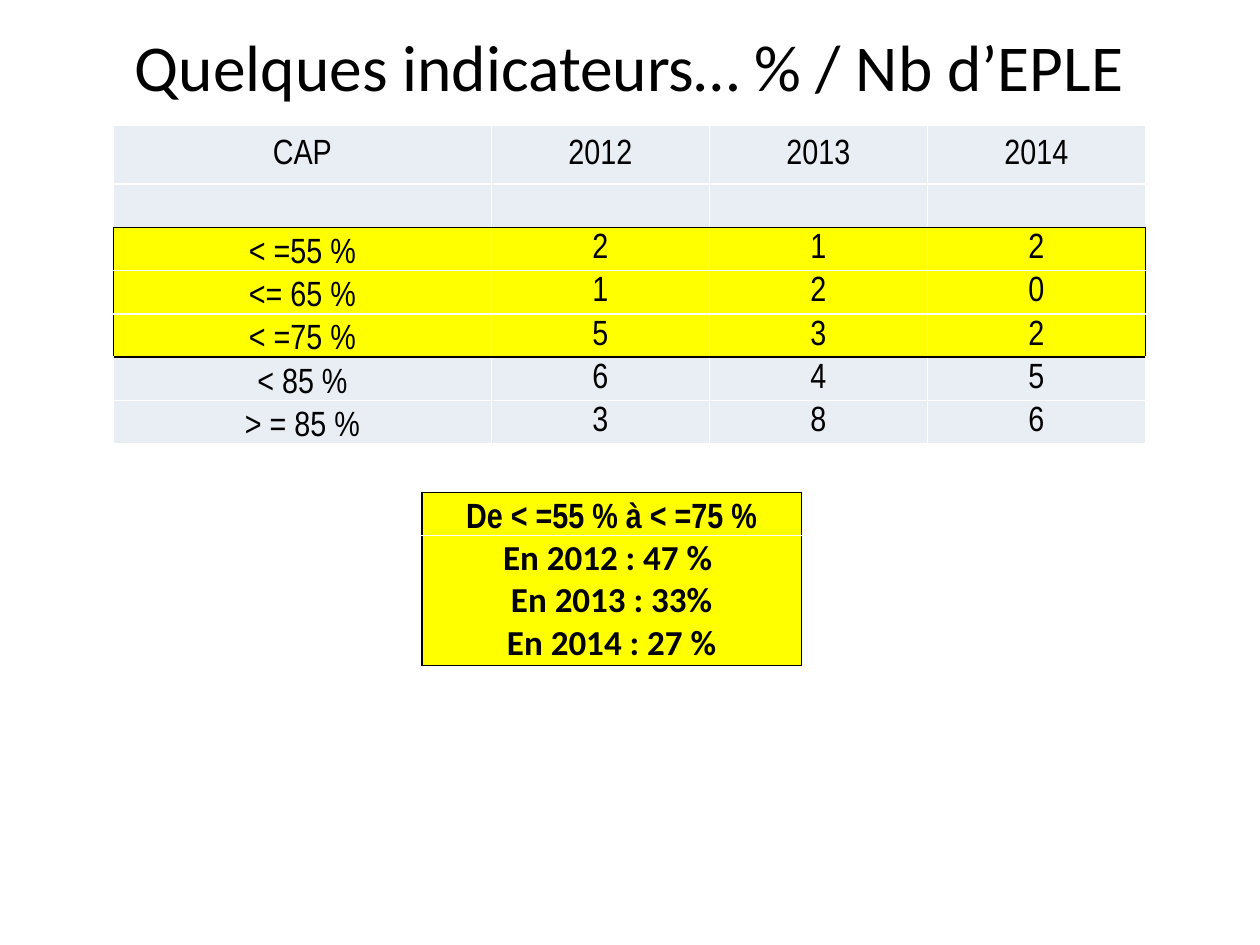
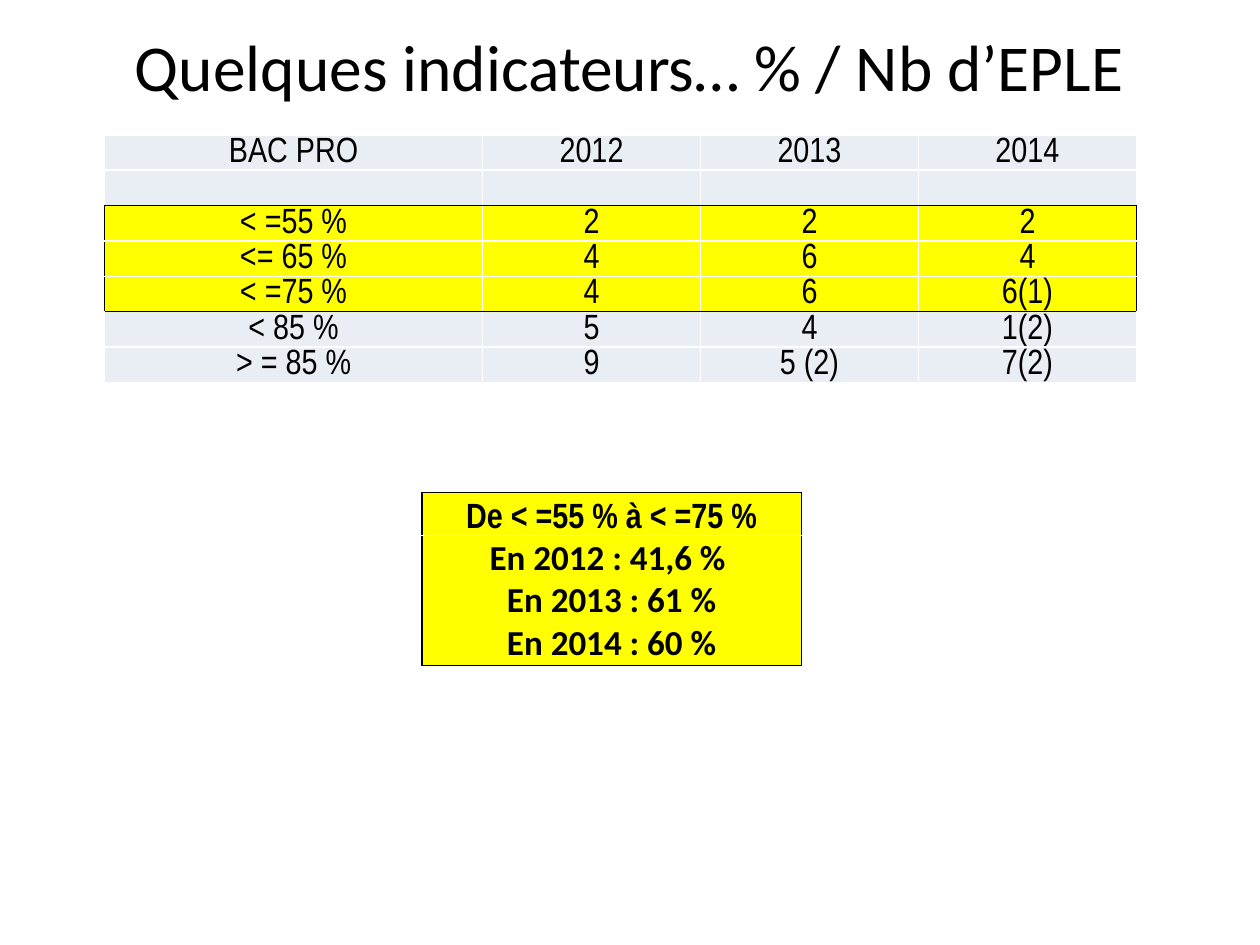
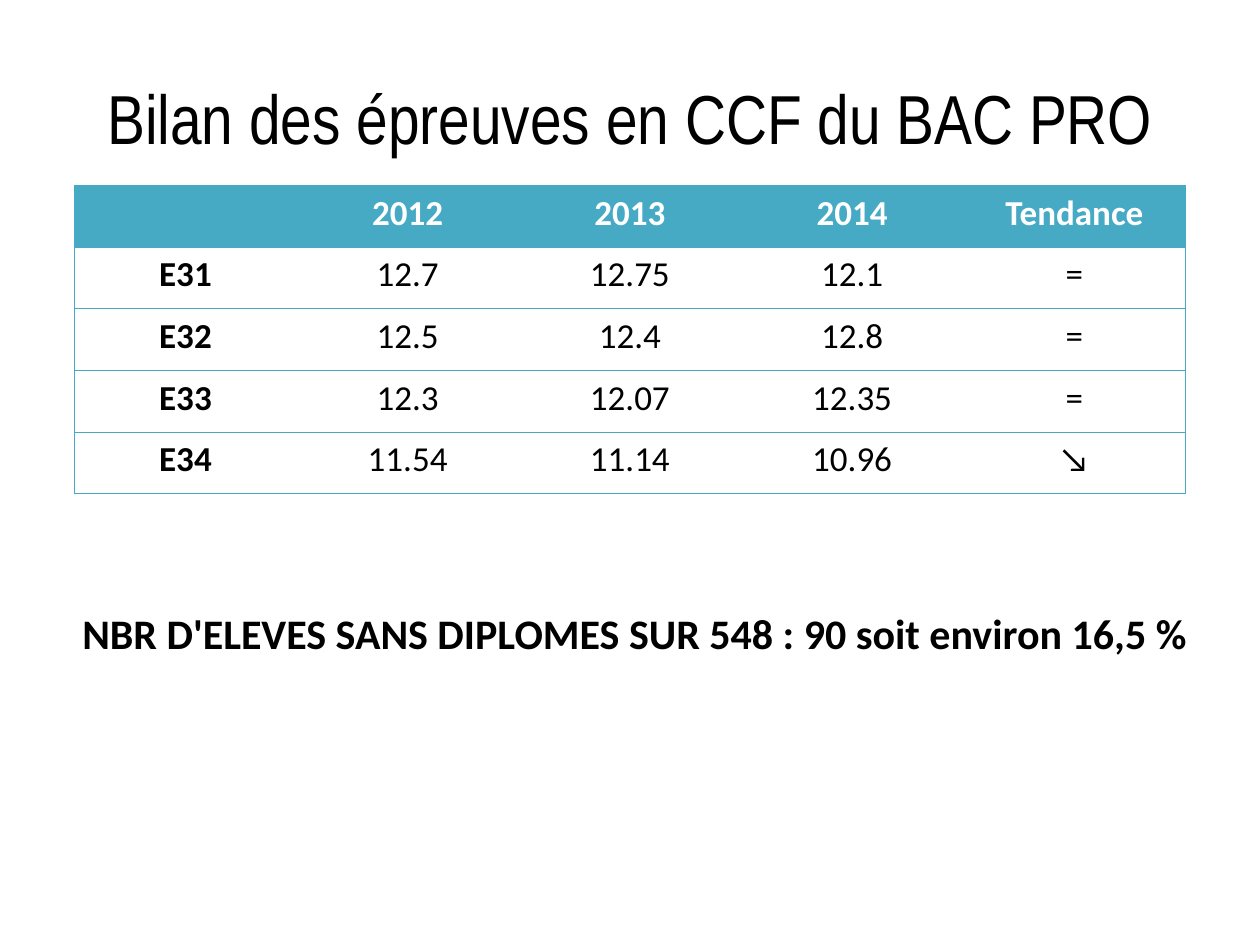
from lxml.etree import SubElement
from pptx import Presentation
from pptx.dml.color import RGBColor
from pptx.enum.text import MSO_ANCHOR, MSO_AUTO_SIZE, PP_ALIGN
from pptx.oxml.ns import qn
from pptx.util import Inches, Pt

BLACK = RGBColor(0x00, 0x00, 0x00)
WHITE = RGBColor(0xFF, 0xFF, 0xFF)
YELLOW = RGBColor(0xFF, 0xFF, 0x00)
PALE = RGBColor(0xE9, 0xED, 0xF4)
TEAL = RGBColor(0x46, 0xAA, 0xC5)

SANS, NARROW = "Calibri", "Arial Narrow"
COLS, ROWS = 100, 75
UNIT = Inches(0.1)
PLAIN = "{2D5ABB26-0587-4C30-8999-92F81FD0307C}"
BANDS = ["< =55 %", "<= 65 %", "< =75 %", "< 85 %", "> = 85 %"]
YEARS = ["2012", "2013", "2014"]
LOW = range(2, 5)
MID, BASE, TOP = MSO_ANCHOR.MIDDLE, MSO_ANCHOR.BOTTOM, MSO_ANCHOR.TOP


def span(*cells):
    """Turn grid steps into lengths."""
    return [round(n * UNIT) for n in cells]


class Deck:
    def __init__(self):
        self.prs = Presentation()
        self.prs.slide_width, self.prs.slide_height = span(COLS, ROWS)
        self.slide = None

    def page(self, title, box, font, size):
        self.slide = self.prs.slides.add_slide(self.prs.slide_layouts[5])
        head = self.slide.shapes.title
        head.left, head.top, head.width, head.height = span(*box)
        frame = head.text_frame
        frame.auto_size = MSO_AUTO_SIZE.NONE
        frame.vertical_anchor = MID
        self.text(frame, [title], font, size)

    def text(self, frame, lines, font, size, color=BLACK, bold=False, gap=None):
        for i, line in enumerate(lines):
            para = frame.add_paragraph() if i else frame.paragraphs[0]
            para.alignment = PP_ALIGN.CENTER
            para.line_spacing = gap
            run = para.add_run()
            run.text = line
            run.font.name, run.font.size = font, Pt(size)
            run.font.color.rgb, run.font.bold = color, bold

    def note(self, text, box):
        frame = self.slide.shapes.add_textbox(*span(*box)).text_frame
        frame.word_wrap = True
        self.text(frame, [text], SANS, 24, bold=True)

    def grid(self, spot, widths, heights):
        """Add a table without style, sized by its columns and rows."""
        box = span(*spot, sum(widths), sum(heights))
        shape = self.slide.shapes.add_table(len(heights), len(widths), *box)
        table = shape.table
        table._tbl.tblPr.find(qn("a:tableStyleId")).text = PLAIN
        table.first_row = table.horz_banding = False
        for col, width in zip(table.columns, span(*widths)):
            col.width = width
        for row, height in zip(table.rows, span(*heights)):
            row.height = height
        return table

    def cell(self, cell, lines, fill, anchor, pads, **style):
        cell.vertical_anchor = anchor
        (cell.margin_left, cell.margin_right,
         cell.margin_top, cell.margin_bottom) = span(*pads)
        if fill is None:
            cell.fill.background()
        else:
            cell.fill.solid()
            cell.fill.fore_color.rgb = fill
        if any(lines):
            self.text(cell.text_frame, lines, size=20, **style)
        else:
            SubElement(cell.text_frame.paragraphs[0]._p, qn("a:endParaRPr"), sz="1000")

    def rule(self, table, marked, outer, row, col, width):
        """Frame the marked rows in outer; rule the rest with row and col."""
        last = len(table.columns) - 1
        ends = marked.start, marked.stop
        for r, line in enumerate(table.rows):
            for c, cell in enumerate(line.cells):
                tints = {
                    "lnL": outer if r in marked and c == 0 else col,
                    "lnR": outer if r in marked and c == last else col,
                    "lnT": outer if r in ends else row,
                    "lnB": outer if r + 1 in ends else row,
                }
                self.edge(cell, tints, width)

    def edge(self, cell, tints, width):
        props = cell._tc.get_or_add_tcPr()
        for i, (side, tint) in enumerate(tints.items()):
            line = SubElement(props, qn(f"a:{side}"), w=str(Pt(width)))
            if tint is None:
                SubElement(line, qn("a:noFill"))
            else:
                fill = SubElement(line, qn("a:solidFill"))
                SubElement(fill, qn("a:srgbClr"), val=str(tint))
            props.insert(i, line)

    def rates(self, name, counts, spot, heights, anchor):
        table = self.grid(spot, [30] + [17.3] * 3, heights)
        data = [[name] + YEARS, [""] * 4]
        data += [[band] + vals for band, vals in zip(BANDS, counts)]
        for r, vals in enumerate(data):
            for c, val in enumerate(vals):
                self.cell(table.cell(r, c), [val], YELLOW if r in LOW else PALE,
                          anchor if c == 0 and r > 1 else MID,
                          (0.1, 0.1, 0.1, 0), font=NARROW)
        self.rule(table, LOW, BLACK, WHITE, WHITE, 1)

    def total(self, shares):
        table = self.grid((33.5, 39.1), [30.1], [3.4, 10.2])
        parts = [(NARROW, ["De < =55 % à < =75 %"]),
                 (SANS, [f"En {year} : {share}" for year, share in zip(YEARS, shares)])]
        for r, (font, lines) in enumerate(parts):
            self.cell(table.cell(r, 0), lines, YELLOW, BASE,
                      (0.1, 0.1, 0.1, 0), font=font, bold=True)
        self.rule(table, range(2), BLACK, WHITE, WHITE, 1)

    def marks(self, data):
        table = self.grid((5.9, 14.7), [17.64] * 5, [4.9] * 5)
        for r, vals in enumerate(data):
            for c, val in enumerate(vals):
                self.cell(table.cell(r, c), [val], None if r else TEAL, TOP,
                          (0.7, 0.7, 0, 0), font=SANS, color=BLACK if r else WHITE,
                          bold=r == 0 or c == 0, gap=1.15)
        self.rule(table, range(5), TEAL, TEAL, None, 0.75)


def main():
    deck = Deck()
    rates = [
        ("CAP", [["2", "1", "2"], ["1", "2", "0"], ["5", "3", "2"],
                 ["6", "4", "5"], ["3", "8", "6"]],
         (9, 9.9), [4.7] + [3.44] * 6, BASE, ["47 % ", "33%", "27 %"]),
        ("BAC PRO", [["2", "2", "2"], ["4", "6", "4"], ["4", "6", "6(1)"],
                     ["5", "4", "1(2)"], ["9", "5 (2)", "7(2)"]],
         (8.3, 10.7), [2.81] * 7, MID, ["41,6 % ", "61 %", "60 %"]),
    ]
    for name, counts, spot, heights, anchor, shares in rates:
        deck.page("Quelques indicateurs… % / Nb d’EPLE", (5, 2.1, 90, 6.2), SANS, 37.4)
        deck.rates(name, counts, spot, heights, anchor)
        deck.total(shares)

    deck.page("Bilan des épreuves en CCF du BAC PRO", (5, 3, 90, 12.5), NARROW, 39.6)
    deck.marks([
        [""] + YEARS + ["Tendance"],
        ["E31", "12.7", "12.75", "12.1", "="],
        ["E32", "12.5", "12.4", "12.8", "="],
        ["E33", "12.3", "12.07", "12.35", "="],
        ["E34", "11.54", "11.14", "10.96", "↘"],
    ])
    deck.note("NBR D'ELEVES SANS DIPLOMES SUR 548 : 90 soit environ 16,5 % ",
              (5.1, 47.7, 91.3, 5.1))
    deck.prs.save("out.pptx")


if __name__ == "__main__":
    main()
